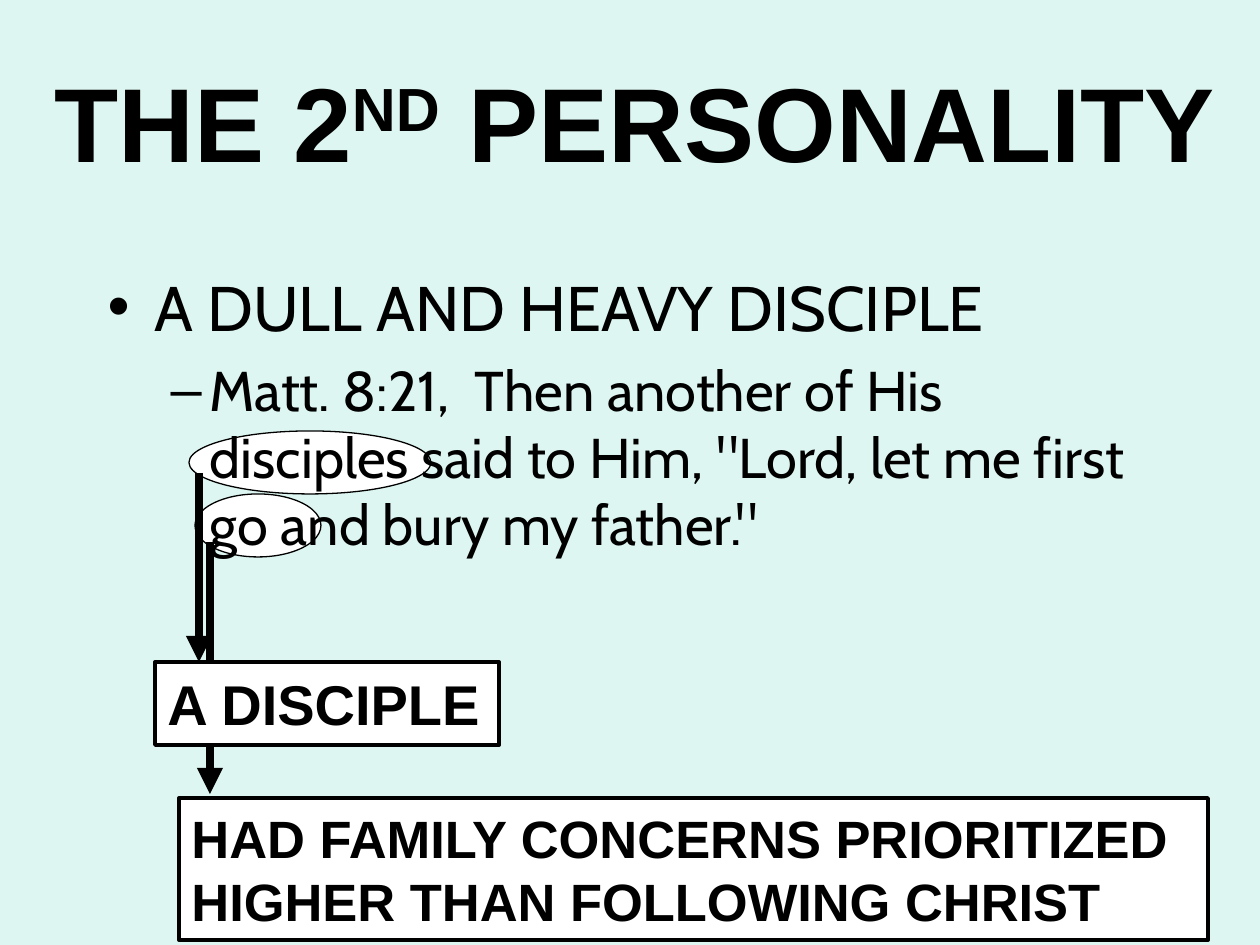
from lxml.etree import SubElement
from pptx import Presentation
from pptx.dml.color import RGBColor
from pptx.enum.shapes import MSO_CONNECTOR as Connector, MSO_SHAPE as Shape
from pptx.enum.text import MSO_ANCHOR as Anchor, MSO_AUTO_SIZE as AutoSize, PP_ALIGN as Align
from pptx.oxml.ns import qn
from pptx.util import Pt

EMU_PER_PX = 914400 / 126
BLACK = RGBColor(0x00, 0x00, 0x00)
WHITE = RGBColor(0xFF, 0xFF, 0xFF)
MINT = RGBColor(0xDE, 0xF6, 0xF1)

TITLE_FONT = {"name": "Arial", "size": Pt(60), "bold": True}
POINT_FONT = {"name": "Cabin", "size": Pt(36), "bold": False}
VERSE_FONT = {"name": "Cabin", "size": Pt(32), "bold": False}
SHORT_NOTE_FONT = {"name": "Arial", "size": Pt(32), "bold": True}
LONG_NOTE_FONT = {"name": "Arial", "size": Pt(30), "bold": True}


def px(length):
    return round(length * EMU_PER_PX)


def format_font(font, values):
    for attribute, value in values.items():
        setattr(font, attribute, value)
    font.color.rgb = BLACK


def place(placeholder, left, top, width, height):
    """Move a placeholder in front of everything drawn so far."""
    box = {"left": left, "top": top, "width": width, "height": height}
    for attribute, value in box.items():
        setattr(placeholder, attribute, px(value))
    element = placeholder._element
    element.getparent().append(element)
    placeholder.text_frame.auto_size = AutoSize.NONE
    placeholder.text_frame.word_wrap = True


def add_outlined(group, kind, box, line_width):
    shape = group.shapes.add_shape(kind, *map(px, box))
    shape.shadow.inherit = False
    shape.fill.solid()
    shape.fill.fore_color.rgb = WHITE
    shape.line.color.rgb = BLACK
    shape.line.width = Pt(line_width)
    return shape


def add_arrow_down(group, x, top, bottom):
    arrow = group.shapes.add_connector(Connector.STRAIGHT, px(x), px(top), px(x), px(bottom))
    arrow.line.color.rgb = BLACK
    arrow.line.width = Pt(5)
    SubElement(arrow.line._get_or_add_ln(), qn("a:tailEnd"), type="triangle")
    SubElement(arrow._element.spPr, qn("a:effectLst"))


def add_note(group, text, box, font):
    note = add_outlined(group, Shape.RECTANGLE, box, 2.25)
    frame = note.text_frame
    frame.word_wrap = True
    frame.vertical_anchor = Anchor.MIDDLE
    paragraph = frame.paragraphs[0]
    paragraph.text = text
    paragraph.alignment = Align.LEFT
    format_font(paragraph.runs[0].font, font)


def add_callout(slide, circle, arrow, text, note_box, font):
    """Circle words of the verse and point from them to a note."""
    group = slide.shapes.add_group_shape()
    add_outlined(group, Shape.OVAL, circle, 0.75)
    add_arrow_down(group, *arrow)
    add_note(group, text, note_box, font)


def fill_title(title):
    place(title, 10, 42, 1250, 157)
    title.text_frame.vertical_anchor = Anchor.MIDDLE
    heading = title.text_frame.paragraphs[0]
    heading.alignment = Align.CENTER
    for text, baseline in (("THE 2", 0), ("ND", 30000), (" PERSONALITY", 0)):
        run = heading.add_run()
        run.text = text
        format_font(run.font, TITLE_FONT)
        if baseline:
            run.font._element.set("baseline", str(baseline))


def fill_bullet(paragraph, text, level, bullet, margin, hanging, space_before, font):
    paragraph.level = level
    paragraph.space_before = Pt(space_before)
    properties = paragraph._p.get_or_add_pPr()
    properties.set("marL", str(px(margin)))
    properties.set("indent", str(-px(hanging)))
    SubElement(properties, qn("a:buChar"), char=bullet)
    run = paragraph.add_run()
    run.text = text
    format_font(run.font, font)


def fill_body(body):
    place(body, 95, 262, 1071, 567)
    frame = body.text_frame
    fill_bullet(frame.paragraphs[0], "A DULL AND HEAVY DISCIPLE",
                0, "•", 47, 47, 0, POINT_FONT)
    fill_bullet(frame.add_paragraph(),
                "Matt. 8:21,  Then another of His disciples said to Him, "
                "\"Lord, let me first go and bury my father.\"",
                1, "–", 102, 39, 6.4, VERSE_FONT)


def main():
    presentation = Presentation()
    presentation.slide_width, presentation.slide_height = px(1260), px(945)
    slide = presentation.slides.add_slide(presentation.slide_layouts[1])
    slide.background.fill.solid()
    slide.background.fill.fore_color.rgb = MINT

    add_callout(slide, (195, 494, 126, 63), (210, 542, 794),
                "HAD FAMILY CONCERNS PRIORITIZED HIGHER THAN FOLLOWING CHRIST",
                (179, 798, 1029, 142), LONG_NOTE_FONT)
    add_callout(slide, (189, 431, 242, 63), (199, 473, 662),
                "A DISCIPLE", (155, 662, 344, 83), SHORT_NOTE_FONT)
    fill_body(slide.placeholders[1])
    fill_title(slide.shapes.title)
    presentation.save("out.pptx")


if __name__ == "__main__":
    main()
